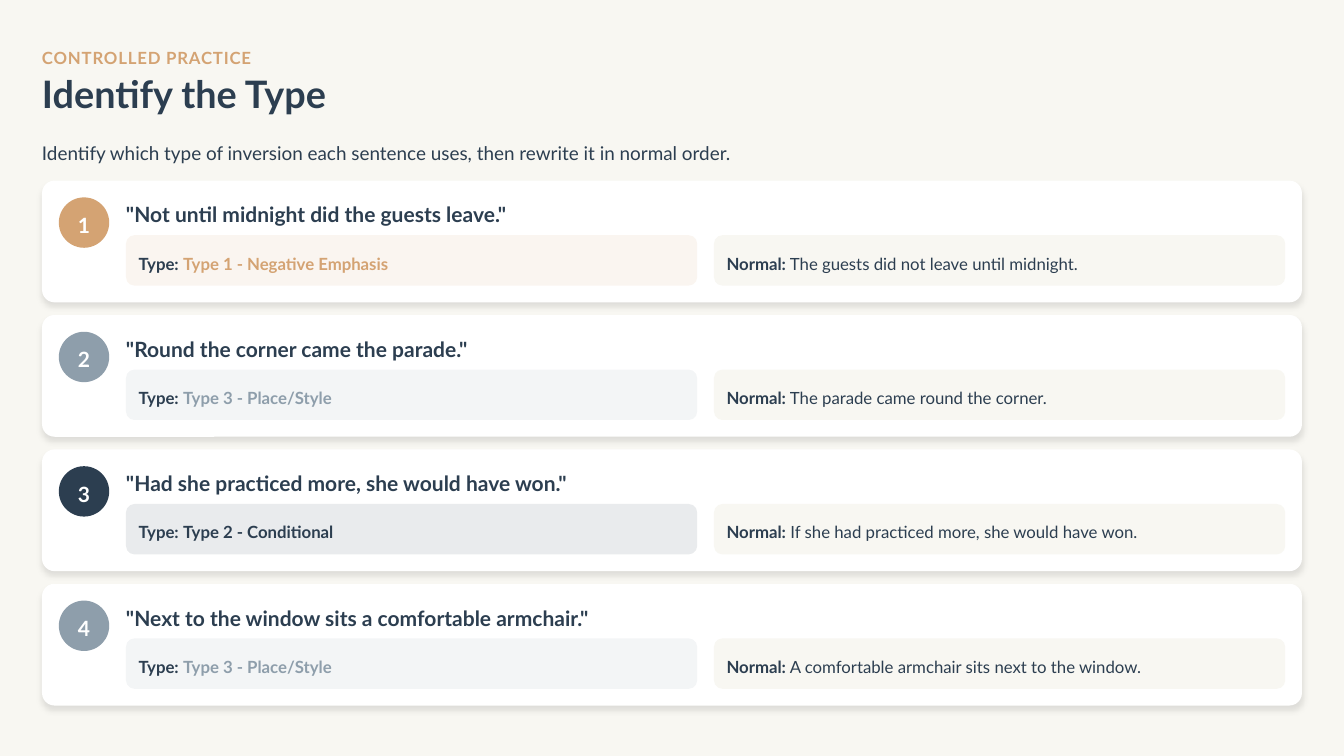
import pptx
import pptx.util
import pptx.dml.color
import pptx.enum.shapes
import pptx.enum.text
import pptx.oxml
import pptx.oxml.ns

PX = 10160  # 90 px to the inch
SHAPE = pptx.enum.shapes.MSO_SHAPE
ALIGN = pptx.enum.text.PP_ALIGN
NAVY, SAND, SLATE = "2C3E50", "D4A373", "8E9EAB"
PAPER, WHITE = "F8F7F2", "FFFFFF"
rgb = pptx.dml.color.RGBColor.from_string


def add_box(kind, x, y, w, h, color, radius=0):
    sp = slide.shapes.add_shape(kind, x * PX, y * PX, w * PX, h * PX)
    if radius:
        sp.adjustments[0] = radius / min(w, h)
    sp.shadow.inherit = False
    sp.fill.solid()
    sp.fill.fore_color.rgb = rgb(color)
    sp.line.fill.background()
    return sp


def write(sp, runs, size, color, spacing, align=ALIGN.LEFT):
    """Fill a shape with one paragraph of (text, bold) runs."""
    tf = sp.text_frame
    tf.margin_left = tf.margin_top = tf.margin_right = tf.margin_bottom = 0
    tf.word_wrap = True
    tf.auto_size = pptx.enum.text.MSO_AUTO_SIZE.NONE
    tf.vertical_anchor = pptx.enum.text.MSO_ANCHOR.MIDDLE
    p = tf.paragraphs[0]
    p.alignment = align
    p.line_spacing = spacing
    p.font.name = "Lato"
    p.font.size = pptx.util.Pt(size)
    p.font.color.rgb = rgb(color)
    p.font.bold = runs[0][1]
    for text, bold in runs:
        r = p.add_run()
        r.text = text
        if len(runs) > 1:
            r.font.bold = bold
    return p


prs = pptx.Presentation()
prs.slide_width, prs.slide_height = 1600 * PX, 900 * PX
slide = prs.slides.add_slide(prs.slide_layouts[5])
slide.background.fill.solid()
slide.background.fill.fore_color.rgb = rgb(PAPER)

# Heading
sp = slide.shapes.add_textbox(50 * PX, 50 * PX, 1510 * PX, 30 * PX)
p = write(sp, [("CONTROLLED PRACTICE", True)], 16, SAND, 1.3)
p.runs[0].font._element.set("spc", "80")

title = slide.shapes.title
title.left, title.top, title.width, title.height = 50 * PX, 90 * PX, 1523 * PX, 50 * PX
write(title, [("Identify the Type", True)], 36, NAVY, 0.9)

sp = slide.shapes.add_textbox(50 * PX, 160 * PX, 1511 * PX, 35 * PX)
write(sp, [("Identify which type of inversion each sentence uses, "
            "then rewrite it in normal order.", False)], 18, NAVY, 1.3)

# Exercise cards: sentence, type, normal order, accent colour
exercises = [
    ("Not until midnight did the guests leave.", "Type 1 - Negative Emphasis",
     "The guests did not leave until midnight.", SAND),
    ("Round the corner came the parade.", "Type 3 - Place/Style",
     "The parade came round the corner.", SLATE),
    ("Had she practiced more, she would have won.", "Type 2 - Conditional",
     "If she had practiced more, she would have won.", NAVY),
    ("Next to the window sits a comfortable armchair.", "Type 3 - Place/Style",
     "A comfortable armchair sits next to the window.", SLATE),
]
for i, (sentence, kind, normal, accent) in enumerate(exercises):
    top = 215 + 160 * i

    # Card with a soft shadow
    card = add_box(SHAPE.ROUNDED_RECTANGLE, 50, top, 1500, 145, WHITE, 15)
    effects = card._element.spPr.find(pptx.oxml.ns.qn("a:effectLst"))
    effects.append(pptx.oxml.parse_xml(
        f'<a:outerShdw {pptx.oxml.ns.nsdecls("a")} blurRad="76200" dist="50800" '
        'dir="5400000" algn="ctr" rotWithShape="0">'
        '<a:srgbClr val="000000"><a:alpha val="10000"/></a:srgbClr></a:outerShdw>'))

    # Number and sentence
    badge = add_box(SHAPE.OVAL, 70, top + 20, 60, 60, accent)
    write(badge, [(str(i + 1), True)], 20, WHITE, 1.2, ALIGN.CENTER)
    sp = slide.shapes.add_textbox(150 * PX, (top + 20) * PX, 1392 * PX, 35 * PX)
    write(sp, [(f'"{sentence}"', True)], 20, NAVY, 1.2)

    # Type answer on a 10 % tint of the accent
    tint = add_box(SHAPE.ROUNDED_RECTANGLE, 150, top + 65, 680, 60, accent, 10)
    clr = tint._element.spPr.find(".//" + pptx.oxml.ns.qn("a:srgbClr"))
    clr.append(pptx.oxml.parse_xml(
        f'<a:alpha {pptx.oxml.ns.nsdecls("a")} val="10000"/>'))
    for x, w, text, color in [(165, 58, "Type:", NAVY), (218, 247, kind, accent)]:
        sp = slide.shapes.add_textbox(x * PX, (top + 84) * PX, w * PX, 22 * PX)
        write(sp, [(text, True)], 16, color, 1.3)

    # Normal order answer
    add_box(SHAPE.ROUNDED_RECTANGLE, 850, top + 65, 680, 60, PAPER, 10)
    sp = slide.shapes.add_textbox(865 * PX, (top + 80) * PX, 660 * PX, 30 * PX)
    write(sp, [("Normal:", True), (" " + normal, False)], 16, NAVY, 1.3)

prs.save("out.pptx")
